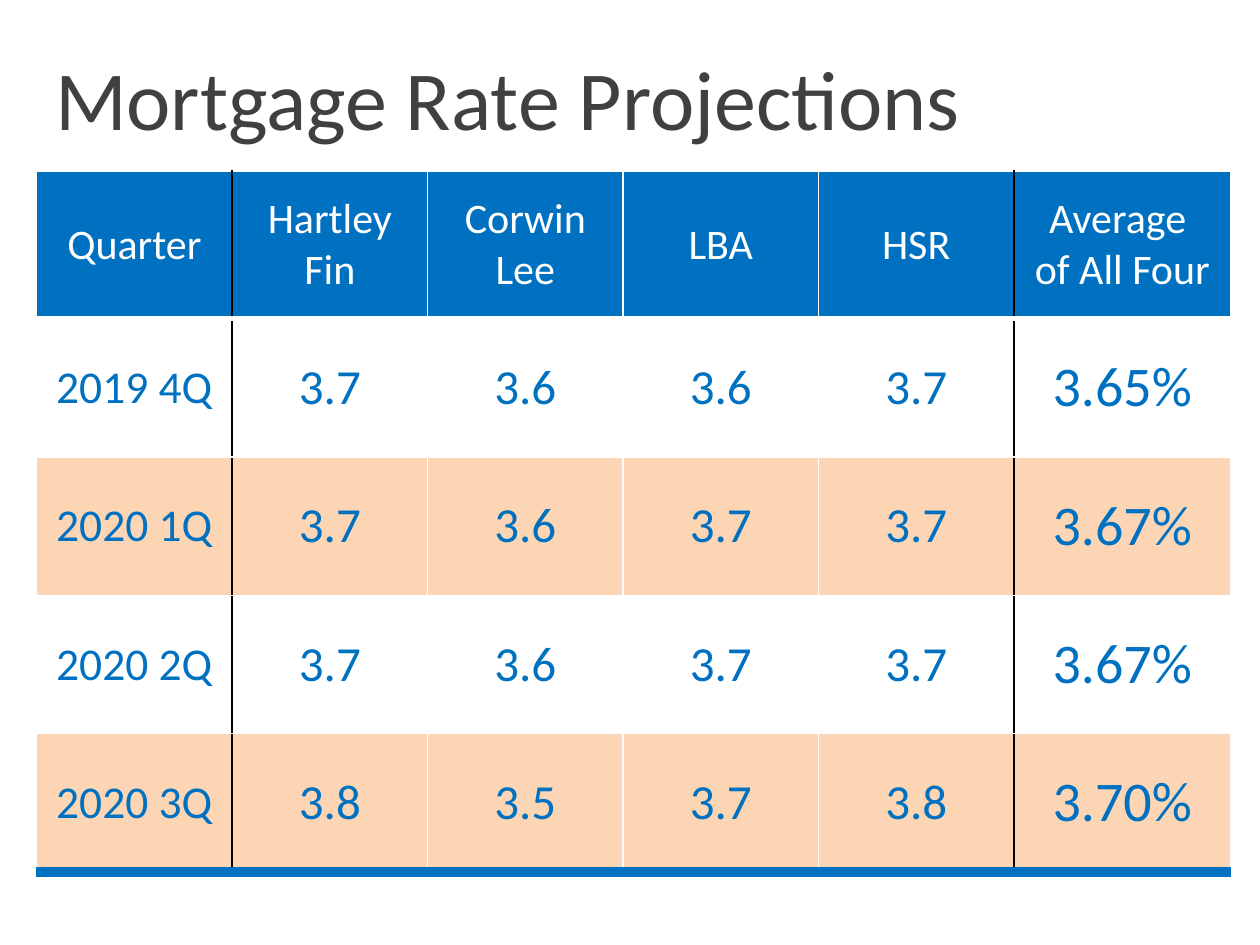
from dataclasses import dataclass

from lxml.etree import SubElement
from pptx import Presentation
from pptx.dml.color import RGBColor
from pptx.enum.text import MSO_ANCHOR as Anchor, MSO_AUTO_SIZE as Fit, PP_ALIGN as Align
from pptx.oxml.ns import qn
from pptx.util import Cm, Pt

FACE = "Calibri"
BLUE, PEACH, WHITE, BLACK, GREY = "0070C0", "FCD5B5", "FFFFFF", "000000", "404040"
HEADS = ["Quarter", "Hartley Fin", "Corwin Lee", "LBA", "HSR", "Average \nof All Four"]
RATES = [
    ["2019 4Q", "3.7", "3.6", "3.6", "3.7", "3.65%"],
    ["2020 1Q", "3.7", "3.6", "3.7", "3.7", "3.67%"],
    ["2020 2Q", "3.7", "3.6", "3.7", "3.7", "3.67%"],
    ["2020 3Q", "3.8", "3.5", "3.7", "3.8", "3.70%"],
]
SIZES = [26, 28, 28, 28, 28, 32]
WIDTHS = [3.94] * 5 + [4.37]
HEIGHTS = [2.97] + [2.79] * 4


@dataclass
class Edge:
    side: str
    hue: str = WHITE
    width: float = 1


@dataclass
class Look:
    size: int
    ink: str
    fill: str
    edges: list[Edge]


def rgb(code: str) -> RGBColor:
    return RGBColor.from_string(code)


def set_text(frame, text: str, size: int, ink: str, align: Align) -> None:
    frame.text = text
    for para in frame.paragraphs:
        para.alignment = align
        font = para.font
        font.name, font.size, font.color.rgb = FACE, Pt(size), rgb(ink)


def add_edge(cell, edge: Edge) -> None:
    props = cell._tc.get_or_add_tcPr()
    line = SubElement(props, qn(f"a:ln{edge.side}"), w=str(Pt(edge.width)))
    SubElement(SubElement(line, qn("a:solidFill")), qn("a:srgbClr"), val=edge.hue)


def get_look(row: int, col: int) -> Look:
    last = len(RATES)
    edges = [
        Edge("L", BLACK if col in (1, 5) else WHITE),
        Edge("R", BLACK if col in (0, 4) else WHITE),
        Edge("T", WHITE, 3 if row == 1 else 1),
        Edge("B", BLUE, 6) if row == last else Edge("B", WHITE, 3 if row == 0 else 1),
    ]
    if row == 0:
        return Look(24, WHITE, BLUE, edges)
    return Look(SIZES[col], BLUE, WHITE if row % 2 else PEACH, edges)


def draw_cell(cell, text: str, look: Look) -> None:
    set_text(cell.text_frame, text, look.size, look.ink, Align.CENTER)
    cell.vertical_anchor = Anchor.MIDDLE
    cell.margin_top = cell.margin_bottom = Cm(0.18)
    for edge in look.edges:
        add_edge(cell, edge)
    cell.fill.solid()
    cell.fill.fore_color.rgb = rgb(look.fill)


def draw_title(slide) -> None:
    frame = slide.shapes.add_textbox(Cm(0.86), Cm(0.81), Cm(22.02), Cm(2.31)).text_frame
    frame.word_wrap = True
    frame.auto_size = Fit.SHAPE_TO_FIT_TEXT
    set_text(frame, "Mortgage Rate Projections", 48, GREY, Align.LEFT)


def draw_table(slide) -> None:
    rows = [HEADS, *RATES]
    table = slide.shapes.add_table(
        len(rows), len(HEADS), Cm(0.74), Cm(3.45), Cm(sum(WIDTHS)), Cm(sum(HEIGHTS))
    ).table
    table.horz_banding = False
    table.first_row = False
    for col, width in zip(table.columns, WIDTHS):
        col.width = Cm(width)
    for row, height in zip(table.rows, HEIGHTS):
        row.height = Cm(height)
    for r, texts in enumerate(rows):
        for c, text in enumerate(texts):
            draw_cell(table.cell(r, c), text, get_look(r, c))


def main() -> None:
    deck = Presentation()
    deck.slide_width, deck.slide_height = Cm(25.4), Cm(19.05)
    slide = deck.slides.add_slide(deck.slide_layouts[6])
    draw_title(slide)
    draw_table(slide)
    deck.save("out.pptx")


if __name__ == "__main__":
    main()
